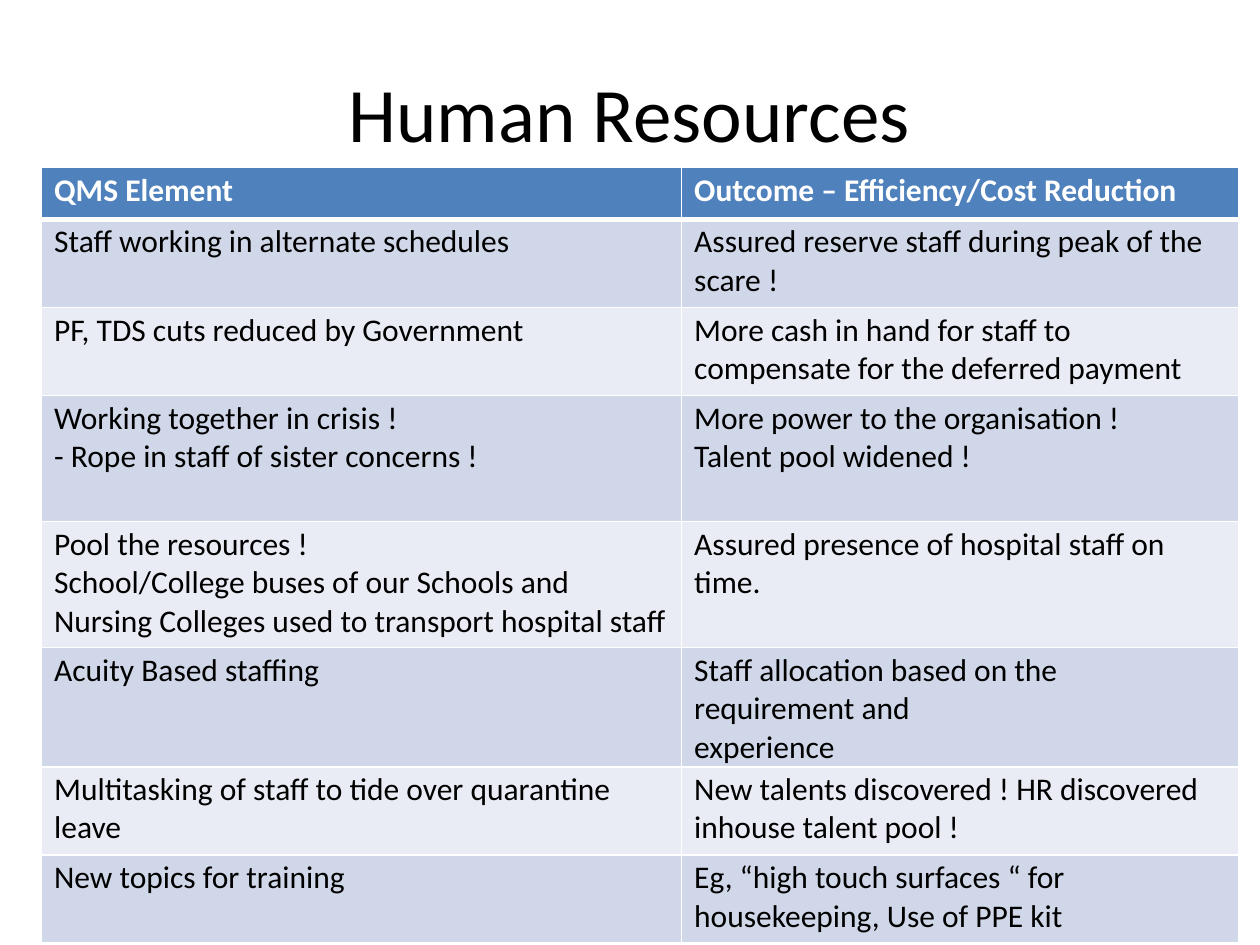
import pptx
import pptx.util
import pptx.dml.color
import pptx.enum.text
import pptx.oxml
import pptx.oxml.ns
from pptx.util import Inches

THEME = {
    "font": "Calibri", "title_size": 44, "table_size": 18,
    "text": "000000", "header_text": "FFFFFF", "border": "FFFFFF",
    "header_fill": "4F81BC", "bands": ("D0D7E8", "E9ECF4"),
    "thin": 1, "thick": 3,
}
TITLE = "Human Resources"
ROWS = [
    (["QMS Element"], ["Outcome – Efficiency/Cost Reduction"]),
    (["Staff working in alternate schedules"],
     ["Assured reserve staff during peak of the\vscare !"]),
    (["PF, TDS cuts reduced by Government"],
     ["More cash in hand for staff to", "compensate for the deferred payment"]),
    (["Working together in crisis !", "- Rope in staff of sister concerns !"],
     ["More power to the organisation !\vTalent pool widened !"]),
    (["Pool the resources !", "School/College buses of our Schools and",
      "Nursing Colleges used to transport hospital staff"],
     ["Assured presence of hospital staff on", "time."]),
    (["Acuity Based staffing"],
     ["Staff allocation based on the\vrequirement and\vexperience"]),
    (["Multitasking of staff to tide over quarantine", "leave"],
     ["New talents discovered ! HR discovered", "inhouse talent pool !"]),
    (["New topics for training"],
     ["Eg, “high touch surfaces “ for", "housekeeping, Use of PPE kit"]),
]
COLUMN_WIDTHS = (5.08, 4.42)
ROW_HEIGHTS = (0.41, 0.7, 0.7, 1, 1, 0.7, 0.7, 0.7)


def color(value):
    return pptx.dml.color.RGBColor.from_string(value)


def format_font(font, size, value, bold=False):
    font.name = THEME["font"]
    font.size = pptx.util.Pt(size)
    font.bold = bold
    font.color.rgb = color(value)


def add_borders(cell, row_index):
    properties = cell._tc.get_or_add_tcPr()
    thick_side = {0: "B", 1: "T"}.get(row_index)
    for side in "LRTB":
        width = THEME["thick"] if side == thick_side else THEME["thin"]
        properties.append(pptx.oxml.parse_xml(
            f'<a:ln{side} {pptx.oxml.ns.nsdecls("a")} w="{pptx.util.Pt(width)}">'
            f'<a:solidFill><a:srgbClr val="{THEME["border"]}"/></a:solidFill>'
            f'</a:ln{side}>'))


def fill_cell(cell, lines, row_index):
    header = row_index == 0
    add_borders(cell, row_index)
    cell.fill.solid()
    cell.fill.fore_color.rgb = color(
        THEME["header_fill"] if header else THEME["bands"][(row_index - 1) % 2])
    cell.margin_left, cell.margin_top = Inches(0.1), Inches(0.03)
    cell.margin_right = cell.margin_bottom = 0
    cell.text = "\n".join(lines)
    for paragraph in cell.text_frame.paragraphs:
        format_font(paragraph.font, THEME["table_size"],
                    THEME["header_text"] if header else THEME["text"], header)


def add_title(slide):
    title = slide.shapes.title
    title.left, title.top = Inches(2.75), Inches(0.51)
    title.width, title.height = Inches(4.49), Inches(0.76)
    frame = title.text_frame
    frame.text = TITLE
    frame.margin_left = frame.margin_right = frame.margin_bottom = 0
    frame.margin_top = Inches(0.01)
    frame.vertical_anchor = pptx.enum.text.MSO_ANCHOR.TOP
    frame.word_wrap = False
    paragraph = frame.paragraphs[0]
    paragraph.alignment = pptx.enum.text.PP_ALIGN.CENTER
    format_font(paragraph.font, THEME["title_size"], THEME["text"])


def add_outcome_table(slide):
    table = slide.shapes.add_table(
        len(ROWS), len(COLUMN_WIDTHS), Inches(0.33), Inches(1.33),
        Inches(sum(COLUMN_WIDTHS)), Inches(sum(ROW_HEIGHTS))).table
    for column, width in zip(table.columns, COLUMN_WIDTHS):
        column.width = Inches(width)
    for row_index, (cells, height) in enumerate(zip(ROWS, ROW_HEIGHTS)):
        table.rows[row_index].height = Inches(height)
        for column_index, lines in enumerate(cells):
            fill_cell(table.cell(row_index, column_index), lines, row_index)


def main():
    presentation = pptx.Presentation()
    presentation.slide_width, presentation.slide_height = Inches(10), Inches(7.5)
    slide = presentation.slides.add_slide(presentation.slide_layouts[5])
    add_title(slide)
    add_outcome_table(slide)
    presentation.save("out.pptx")


if __name__ == "__main__":
    main()
